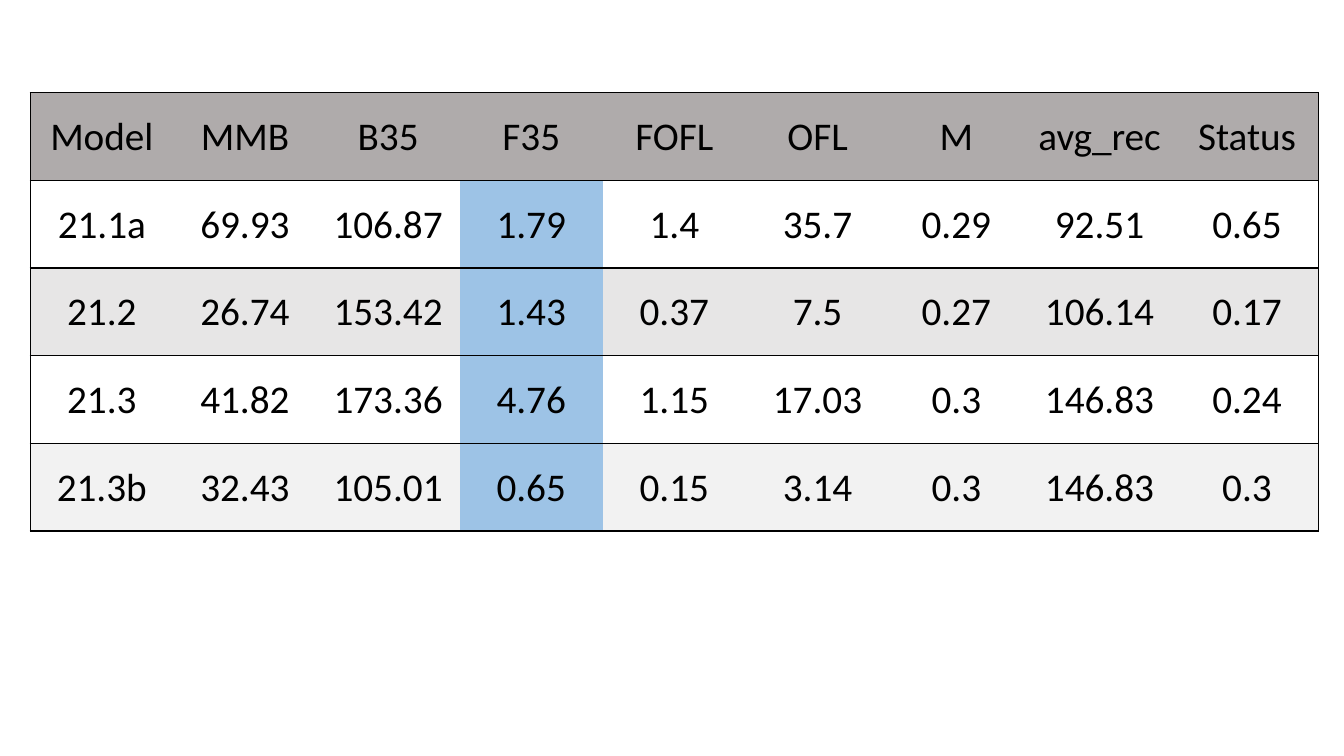
from dataclasses import dataclass

from lxml import etree
from pptx import Presentation
from pptx.dml.color import RGBColor
from pptx.enum.text import MSO_ANCHOR, PP_ALIGN
from pptx.oxml.ns import qn
from pptx.util import Inches, Pt

MIDDLE = MSO_ANCHOR.MIDDLE
CENTER = PP_ALIGN.CENTER
BLANK_LAYOUT = 6
PLAIN_TABLE_STYLE = "{2D5ABB26-0587-4C30-8999-92F81FD0307C}"

SLIDE_WIDTH, SLIDE_HEIGHT = 13.33, 7.5
TABLE_BOX = (0.3, 0.92, 12.78, 4.35)


@dataclass(frozen=True)
class Theme:
    font: str = "Calibri"
    text_size: int = 28
    text: str = "000000"
    border: str = "000000"
    border_width: int = 1
    highlight: str = "9DC3E6"
    row_fills: tuple = ("AFABAB", "FFFFFF", "E7E6E6", "FFFFFF", "F2F2F2")


THEME = Theme()

MODEL_RESULTS = [
    ["Model", "MMB", "B35", "F35", "FOFL", "OFL", "M", "avg_rec", "Status"],
    ["21.1a", "69.93", "106.87", "1.79", "1.4", "35.7", "0.29", "92.51", "0.65"],
    ["21.2", "26.74", "153.42", "1.43", "0.37", "7.5", "0.27", "106.14", "0.17"],
    ["21.3", "41.82", "173.36", "4.76", "1.15", "17.03", "0.3", "146.83", "0.24"],
    ["21.3b", "32.43", "105.01", "0.65", "0.15", "3.14", "0.3", "146.83", "0.3"],
]
COLUMN_SHARES = [1, 1, 1, 1, 1, 1, 0.94, 1.06, 1]
HIGHLIGHT_COLUMN = MODEL_RESULTS[0].index("F35")

CELL_FORMAT = {
    "vertical_anchor": MIDDLE,
    "margin_left": Inches(0.01),
    "margin_top": Inches(0.01),
    "margin_right": Inches(0.01),
    "margin_bottom": 0,
}
FONT_FORMAT = {"name": THEME.font, "size": Pt(THEME.text_size), "bold": False}


def apply_format(target, values):
    for attribute, value in values.items():
        setattr(target, attribute, value)


def add_borders(cell, sides):
    """Rule the given sides, which must come in the order L, R, T, B."""
    properties = cell._tc.get_or_add_tcPr()
    for side in sides:
        line = etree.SubElement(properties, qn(f"a:ln{side}"),
                                w=str(Pt(THEME.border_width)))
        fill = etree.SubElement(line, qn("a:solidFill"))
        etree.SubElement(fill, qn("a:srgbClr"), val=THEME.border)


def fill_cell(cell, label, fill, sides):
    add_borders(cell, sides)
    apply_format(cell, CELL_FORMAT)
    cell.fill.solid()
    cell.fill.fore_color.rgb = RGBColor.from_string(fill)
    paragraph = cell.text_frame.paragraphs[0]
    paragraph.alignment = CENTER
    run = paragraph.add_run()
    run.text = label
    apply_format(run.font, FONT_FORMAT)
    run.font.color.rgb = RGBColor.from_string(THEME.text)


def add_results_table(slide, box):
    left, top, width, height = box
    row_count, column_count = len(MODEL_RESULTS), len(COLUMN_SHARES)
    results = slide.shapes.add_table(
        row_count, column_count, *(Inches(length) for length in box)).table
    apply_format(results, {"first_row": False, "horz_banding": False})
    results._tbl.tblPr.find(qn("a:tableStyleId")).text = PLAIN_TABLE_STYLE

    for column, share in zip(results.columns, COLUMN_SHARES):
        column.width = Inches(width * share / sum(COLUMN_SHARES))
    for row in results.rows:
        row.height = Inches(height / row_count)

    for r, (labels, row_fill) in enumerate(zip(MODEL_RESULTS, THEME.row_fills)):
        for c, label in enumerate(labels):
            highlighted = r > 0 and c == HIGHLIGHT_COLUMN
            outer = {0: "L", column_count - 1: "R"}.get(c, "")
            fill_cell(results.cell(r, c), label,
                      THEME.highlight if highlighted else row_fill,
                      outer + "TB")


def main():
    presentation = Presentation()
    presentation.slide_width = Inches(SLIDE_WIDTH)
    presentation.slide_height = Inches(SLIDE_HEIGHT)
    slide = presentation.slides.add_slide(
        presentation.slide_layouts[BLANK_LAYOUT])
    add_results_table(slide, TABLE_BOX)
    presentation.save("out.pptx")


if __name__ == "__main__":
    main()
